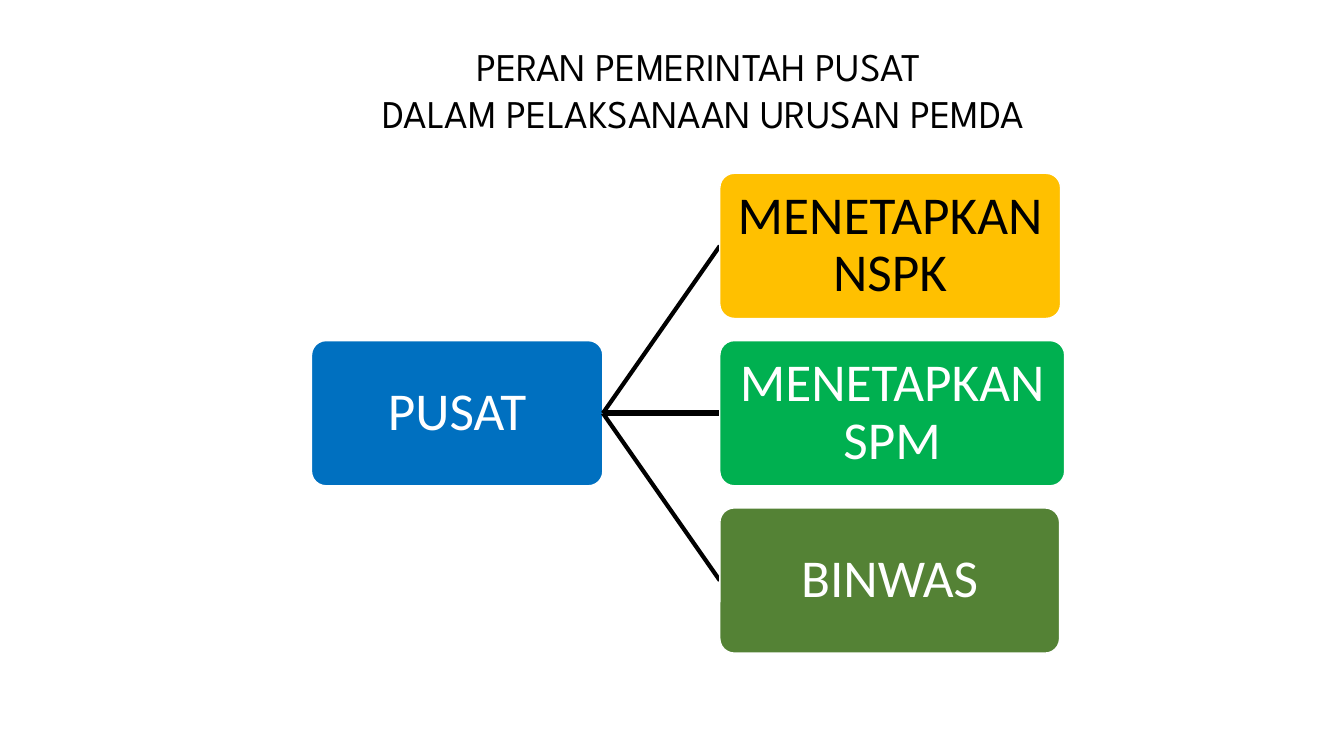
from dataclasses import dataclass

from lxml.etree import SubElement
from pptx import Presentation
from pptx.dml.color import RGBColor
from pptx.enum.shapes import MSO_CONNECTOR as Connector, MSO_SHAPE as Shape
from pptx.enum.text import MSO_ANCHOR as Anchor, PP_ALIGN as Align
from pptx.oxml.ns import qn
from pptx.util import Inches, Pt

WIDTH, HEIGHT = 13.33, 7.5
ROLE_LEFT, ROLE_TOP, ROLE_STEP = 53.56, 22.93, 22.13
BOX_HEIGHT = 19.2
CENTER_LEFT, CENTER_WIDTH = 23.18, 21.68
ROLES = [
    ("MENETAPKAN NSPK", 25.36, "FFC000", "000000", 3),
    ("MENETAPKAN SPM", 25.66, "00B050", "FFFFFF", 4.5),
    ("BINWAS", 25.28, "548235", "FFFFFF", 3),
]


def color(value):
    return RGBColor.from_string(value)


def across(share):
    return Inches(WIDTH * share / 100)


def down(share):
    return Inches(HEIGHT * share / 100)


def write(frame, text, *, font, size, fill, spacing=None):
    frame.word_wrap = True
    frame.vertical_anchor = Anchor.MIDDLE
    for index, line in enumerate(text.split("\n")):
        paragraph = frame.add_paragraph() if index else frame.paragraphs[0]
        paragraph.alignment = Align.CENTER
        paragraph.line_spacing = spacing
        run = paragraph.add_run()
        run.text = line
        run.font.name = font
        run.font.size = Pt(size)
        run.font.color.rgb = color(fill)


@dataclass
class Diagram:
    slide: object
    title_font: str = "League Spartan"
    box_font: str = "Calibri"
    title_size: float = 28
    box_size: float = 38
    ink: str = "000000"
    outline: str = "FFFFFF"

    def rounded(self, left, top, width, height):
        shape = self.slide.shapes.add_shape(
            Shape.ROUNDED_RECTANGLE, across(left), down(top), across(width), down(height))
        shape.shadow.inherit = False
        return shape

    def title(self, text, *area):
        shape = self.rounded(*area)
        shape.fill.background()
        shape.line.fill.background()
        write(shape.text_frame, text, font=self.title_font, size=self.title_size, fill=self.ink)

    def box(self, text, left, top, width, fill, text_fill):
        shape = self.rounded(left, top, width, BOX_HEIGHT)
        shape.adjustments[0] = 0.1
        shape.fill.solid()
        shape.fill.fore_color.rgb = color(fill)
        shape.line.color.rgb = color(self.outline)
        shape.line.width = Pt(1)
        frame = shape.text_frame
        frame.margin_left = frame.margin_right = Inches(0.03)
        frame.margin_top = frame.margin_bottom = Inches(0.03)
        write(frame, text, font=self.box_font, size=self.box_size, fill=text_fill, spacing=0.9)

    def link(self, start, end, weight):
        line = self.slide.shapes.add_connector(
            Connector.STRAIGHT, across(start[0]), down(start[1]), across(end[0]), down(end[1]))
        line.line.color.rgb = color(self.ink)
        line.line.width = Pt(weight)
        SubElement(line.element.spPr, qn("a:effectLst"))


def main():
    presentation = Presentation()
    presentation.slide_width = Inches(WIDTH)
    presentation.slide_height = Inches(HEIGHT)
    diagram = Diagram(presentation.slides.add_slide(presentation.slide_layouts[6]))

    center_top = ROLE_TOP + ROLE_STEP
    hub = (CENTER_LEFT + CENTER_WIDTH, center_top + BOX_HEIGHT / 2)
    diagram.box("PUSAT", CENTER_LEFT, center_top, CENTER_WIDTH, "0070C0", "FFFFFF")
    for row, (text, width, fill, text_fill, weight) in enumerate(ROLES):
        top = ROLE_TOP + row * ROLE_STEP
        diagram.link(hub, (ROLE_LEFT, top + BOX_HEIGHT / 2), weight)
        diagram.box(text, ROLE_LEFT, top, width, fill, text_fill)
    diagram.title("PERAN PEMERINTAH PUSAT \nDALAM PELAKSANAAN URUSAN PEMDA",
                  10.58, 5.33, 83.5, 13.07)
    presentation.save("out.pptx")


if __name__ == "__main__":
    main()
